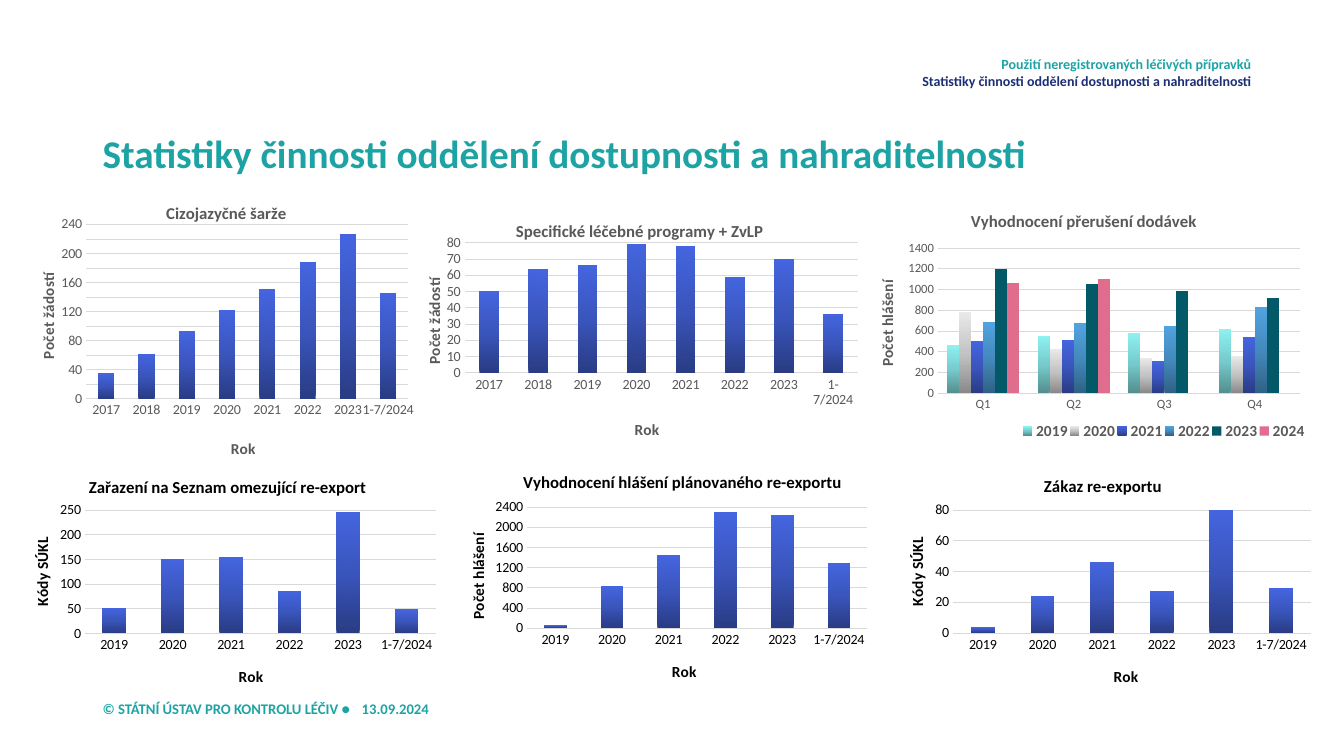
from copy import deepcopy
from dataclasses import dataclass

from lxml.etree import SubElement
from pptx import Presentation
from pptx.chart.data import CategoryChartData
from pptx.dml.color import RGBColor
from pptx.enum.chart import XL_CHART_TYPE as ChartType
from pptx.enum.chart import XL_LEGEND_POSITION as LegendPosition
from pptx.enum.chart import XL_TICK_MARK as TickMark
from pptx.enum.text import MSO_ANCHOR as Anchor
from pptx.enum.text import PP_ALIGN as Align
from pptx.oxml.ns import qn
from pptx.util import Inches, Pt


@dataclass(frozen=True)
class Theme:
    font: str = "Calibri"
    teal: str = "1EA3A4"
    navy: str = "1C2F76"
    gray: str = "595959"
    black: str = "000000"
    grid: str = "D9D9D9"
    blue: tuple = ("293C84", "3A55BC", "4465DF")
    aqua: tuple = ("548F8F", "77CBCC", "8EF1F2")
    silver: tuple = ("8A8A8A", "C4C4C4", "E9E9E9")
    sky: tuple = ("306185", "448ABD", "51A3E0")
    petrol: tuple = ("035968",)
    pink: tuple = ("E16D8E",)
    heading: float = 28
    header: float = 10
    footer: float = 10.5
    chart_title: float = 12
    axis_title: float = 11
    tick: float = 10
    small_tick: float = 9


THEME = Theme()
RAMP = [THEME.aqua, THEME.silver, THEME.blue, THEME.sky, THEME.petrol, THEME.pink]


def style_font(font, size, color, bold=False):
    font.name = THEME.font
    font.size = Pt(size)
    font.bold = bold
    font.color.rgb = RGBColor.from_string(color)


def write(frame, text, size, color, bold=True, align=None, line_spacing=None):
    paragraph = frame.paragraphs[0]
    if align is not None:
        paragraph.alignment = align
    if line_spacing:
        paragraph.line_spacing = line_spacing
    run = paragraph.add_run()
    run.text = text
    style_font(run.font, size, color, bold)


def place(element, index, *percents, inner=False):
    for old in element.findall(qn("c:layout")):
        element.remove(old)
    layout = SubElement(element, qn("c:layout"))
    element.insert(index, layout)
    manual = SubElement(layout, qn("c:manualLayout"))
    settings = [("layoutTarget", "inner")] if inner else []
    settings += [("xMode", "edge"), ("yMode", "edge")]
    settings += [(name, f"{percent / 100:.3f}") for name, percent in zip("xywh", percents)]
    for name, value in settings:
        SubElement(manual, qn(f"c:{name}")).set("val", value)


def paint(series, colors):
    fill = series.format.fill
    if len(colors) == 1:
        fill.solid()
        fill.fore_color.rgb = RGBColor.from_string(colors[0])
        return
    fill.gradient()
    fill.gradient_angle = 90
    stops = series._element.find(f".//{qn('a:gsLst')}")
    stops.append(deepcopy(stops[0]))
    for stop, position, color in zip(fill.gradient_stops, (0, 0.5, 1), colors):
        stop.position = position
        stop.color.rgb = RGBColor.from_string(color)


class SlideBuilder:
    def __init__(self, presentation):
        self.column = presentation.slide_width / 100
        self.row = presentation.slide_height / 100
        self.slide = presentation.slides.add_slide(presentation.slide_layouts[6])

    def box(self, left, top, width, height):
        return (round(left * self.column), round(top * self.row),
                round(width * self.column), round(height * self.row))

    def text(self, text, box, anchor=Anchor.TOP, inset=True, wrap=True, **style):
        frame = self.slide.shapes.add_textbox(*self.box(*box)).text_frame
        frame.word_wrap = wrap
        frame.vertical_anchor = anchor
        if not inset:
            frame.margin_left = frame.margin_right = frame.margin_top = frame.margin_bottom = 0
        write(frame, text, **style)

    def axis(self, axis, ink, tick_size, title, title_at, rotation):
        axis.major_tick_mark = axis.minor_tick_mark = TickMark.NONE
        axis.format.line.fill.background()
        style_font(axis.tick_labels.font, tick_size, ink)
        axis.has_title = bool(title)
        if title:
            write(axis.axis_title.text_frame, title, THEME.axis_title, ink)
            element = axis.axis_title._element
            element.find(f".//{qn('a:bodyPr')}").set("rot", str(rotation))
            place(element, 1, *title_at)

    def chart(self, title, box, categories, series, plot, title_at, value_title,
              value_at, category_at=None, ink=THEME.black, tick_size=THEME.tick,
              maximum=None, step=None, stacked=False, legend=None):
        data = CategoryChartData()
        data.categories = categories
        for name, values in series.items():
            data.add_series(name, values)
        kind = ChartType.COLUMN_STACKED if stacked else ChartType.COLUMN_CLUSTERED
        chart = self.slide.shapes.add_chart(kind, *self.box(*box), data).chart
        style_font(chart.font, THEME.tick, THEME.black)
        chart.has_title = True
        write(chart.chart_title.text_frame, title, THEME.chart_title, ink)
        place(chart.chart_title._element, 1, *title_at)
        self.axis(chart.category_axis, ink, tick_size, category_at and "Rok", category_at, 0)
        self.axis(chart.value_axis, ink, tick_size, value_title, value_at, -5400000)
        value_axis = chart.value_axis
        value_axis.minimum_scale = 0
        value_axis.maximum_scale = maximum
        value_axis.major_unit = step
        grid_line = value_axis.major_gridlines.format.line
        grid_line.width = Pt(0.25)
        grid_line.color.rgb = RGBColor.from_string(THEME.grid)
        bars = chart.plots[0]
        bars.gap_width = 150
        bars.overlap = 100 if stacked else 0
        bars.vary_by_categories = False
        for bar_series, colors in zip(bars.series, RAMP if legend else [THEME.blue]):
            paint(bar_series, colors)
        place(chart._chartSpace.find(f".//{qn('c:plotArea')}"), 0, *plot, inner=True)
        chart.has_legend = bool(legend)
        if legend:
            chart.legend.position = LegendPosition.BOTTOM
            chart.legend.include_in_layout = False
            style_font(chart.legend.font, THEME.axis_title, ink, bold=True)
            place(chart.legend._element, 1, *legend)


def main():
    presentation = Presentation()
    presentation.slide_width, presentation.slide_height = Inches(13.33), Inches(7.5)
    builder = SlideBuilder(presentation)
    heading = "Statistiky činnosti oddělení dostupnosti a nahraditelnosti"
    footer = dict(size=THEME.footer, color=THEME.teal)
    header = dict(size=THEME.header, align=Align.RIGHT, inset=False)

    builder.text("© STÁTNÍ ÚSTAV PRO KONTROLU LÉČIV ●", (6.9, 91.87, 20.7, 3.73), **footer)
    builder.text("13.09.2024", (26.18, 91.87, 8.63, 3.73), anchor=Anchor.MIDDLE, **footer)
    builder.text(heading, (6.9, 16.53, 86.25, 8.13), anchor=Anchor.MIDDLE,
                 size=THEME.heading, color=THEME.teal, line_spacing=0.9)
    builder.text("Použití neregistrovaných léčivých přípravků", (51.45, 7.33, 41.62, 2.13),
                 color=THEME.teal, **header)
    builder.text(heading, (51.45, 9.6, 41.62, 2.53), color=THEME.navy, **header)

    last = "1-7/2024"
    long_years = [str(year) for year in range(2017, 2024)] + [last]
    short_years = long_years[2:]
    requests, reports, codes = "Počet žádostí", "Počet hlášení", "Kódy SÚKL"

    builder.chart("Cizojazyčné šarže", (2.1, 23.73, 29.1, 37.6), long_years,
                  {"Series 1": (35, 62, 93, 122, 151, 188, 226, 146)},
                  plot=(14.8, 16.1, 82.4, 62.5), title_at=(34.5, 6.9),
                  value_title=requests, value_at=(1.7, 32.9), category_at=(51.1, 92),
                  ink=THEME.gray, maximum=240, step=20, stacked=True)
    builder.chart("Specifické léčebné programy + ZvLP", (29.92, 26.53, 34.95, 33.87), long_years,
                  {"Series 1": (50, 64, 66, 79, 78, 59, 70, 36)},
                  plot=(13.3, 16.4, 83.7, 50.8), title_at=(23.6, 6.4),
                  value_title=requests, value_at=(4, 29), category_at=(48.9, 84.1),
                  ink=THEME.gray, maximum=80, step=10)
    builder.chart("Vyhodnocení přerušení dodávek", (63.6, 25.73, 33.82, 34),
                  ["Q1", "Q2", "Q3", "Q4"],
                  {"2019": (460, 550, 580, 620), "2020": (780, 420, 340, 360),
                   "2021": (500, 510, 310, 540), "2022": (680, 670, 650, 830),
                   "2023": (1200, 1050, 980, 920), "2024": (1060, 1100, None, None)},
                  plot=(18.3, 20.8, 79.7, 56.4), title_at=(24.9, 4.9),
                  value_title=reports, value_at=(4.2, 32.1), ink=THEME.gray,
                  tick_size=THEME.small_tick, legend=(36.5, 87, 63, 10))
    builder.chart("Vyhodnocení hlášení plánovaného re-exportu", (32.85, 60.13, 32.33, 32.27),
                  short_years, {"Series 1": (60, 830, 1440, 2300, 2240, 1290)},
                  plot=(19.7, 21.5, 78.3, 49.6), title_at=(18.1, 5.5),
                  value_title=reports, value_at=(5.4, 30.9), category_at=(52.4, 83.4),
                  maximum=2400, step=400)
    builder.chart("Zařazení na Seznam omezující re-export", (0.45, 60.53, 32.63, 32.53),
                  short_years, {"Series 1": (52, 151, 155, 86, 246, 49)},
                  plot=(18, 21.3, 80, 50.2), title_at=(18.2, 6.2),
                  value_title=codes, value_at=(5.2, 31.1), category_at=(52.4, 83.5),
                  maximum=250, step=50)
    builder.chart("Zákaz re-exportu", (65.55, 60.4, 32.7, 32.53),
                  short_years, {"Series 1": (4, 24, 46, 27, 80, 29)},
                  plot=(16.4, 21.7, 81.4, 50), title_at=(36.4, 6.3),
                  value_title=codes, value_at=(5.2, 31.5), category_at=(52.3, 83.9),
                  maximum=80, step=20)
    presentation.save("out.pptx")


if __name__ == "__main__":
    main()
